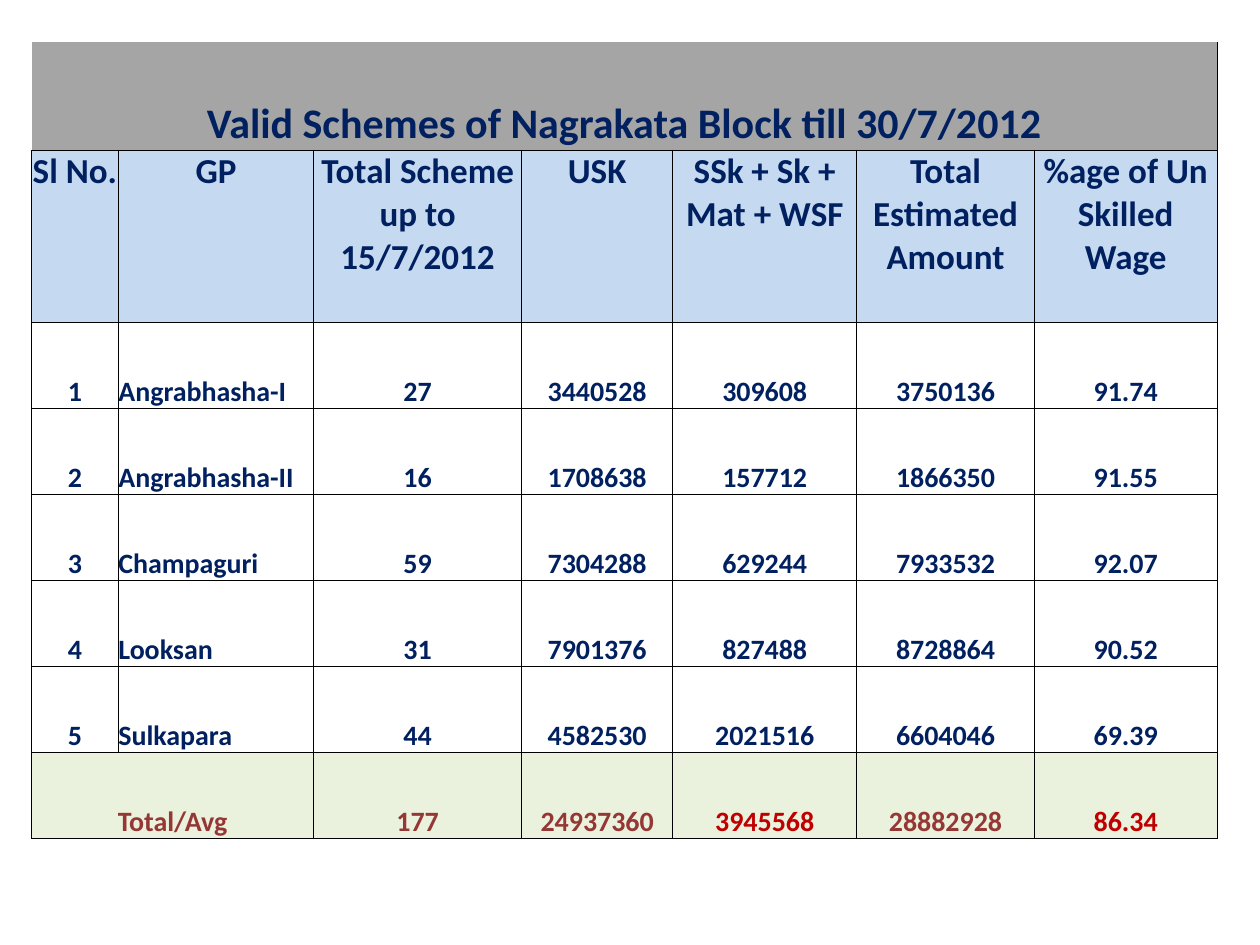
from lxml.etree import SubElement
from pptx import Presentation
from pptx.dml.color import RGBColor
from pptx.enum.text import MSO_ANCHOR, PP_ALIGN
from pptx.oxml.ns import qn
from pptx.util import Inches, Pt

TITLE = "Valid Schemes of Nagrakata Block till 30/7/2012"
HEADINGS = ["Sl No.", "GP", "Total Scheme up to 15/7/2012", "USK",
            "SSk + Sk + Mat + WSF", "Total Estimated Amount",
            "%age of Un Skilled Wage"]
SCHEMES = [
    ("Angrabhasha-I", 27, 3440528, 309608, 3750136, 91.74),
    ("Angrabhasha-II", 16, 1708638, 157712, 1866350, 91.55),
    ("Champaguri", 59, 7304288, 629244, 7933532, 92.07),
    ("Looksan", 31, 7901376, 827488, 8728864, 90.52),
    ("Sulkapara", 44, 4582530, 2021516, 6604046, 69.39),
]
TOTALS = ["Total/Avg", None, 177, 24937360, 3945568, 28882928, 86.34]
HIGHLIGHTED_TOTALS = {4, 6}

THEME = {
    "font": "Calibri", "border": "000000", "border_width": 0.5,
    "highlight": "C00000",
    "title": {"size": 24, "color": "002060", "fill": "A5A5A5"},
    "heading": {"size": 20, "color": "002060", "fill": "C5D9F1"},
    "scheme": {"size": 16, "color": "002060", "fill": None},
    "total": {"size": 16, "color": "953735", "fill": "EAF1DD"},
}

LEFT, TOP, HEIGHT = 0.25, 0.33, 6.33
COLUMN_WIDTHS = [0.69, 1.55, 1.65, 1.2, 1.46, 1.41, 1.45]
TITLE_HEIGHT, HEADING_HEIGHT = 0.86, 1.37
NAME_COLUMN = 1
ALL_SIDES = "LRTB"


def set_borders(cell, drawn_sides):
    """Draw the named sides and clear the rest; call before filling the cell."""
    properties = cell._tc.get_or_add_tcPr()
    for side in ALL_SIDES:
        line = SubElement(properties, qn(f"a:ln{side}"),
                          w=str(Pt(THEME["border_width"])))
        if side in drawn_sides:
            paint = SubElement(line, qn("a:solidFill"))
            SubElement(paint, qn("a:srgbClr"), val=THEME["border"])
        else:
            SubElement(line, qn("a:noFill"))


def style_cell(cell, kind, sides):
    set_borders(cell, sides)
    if THEME[kind]["fill"]:
        cell.fill.solid()
        cell.fill.fore_color.rgb = RGBColor.from_string(THEME[kind]["fill"])
    else:
        cell.fill.background()
    layout = {
        "margin_left": 0, "margin_right": 0, "margin_top": 0, "margin_bottom": 0,
        "vertical_anchor": MSO_ANCHOR.TOP if kind == "heading" else MSO_ANCHOR.BOTTOM,
    }
    for name, value in layout.items():
        setattr(cell, name, value)


def write_cell(cell, value, kind, color, align):
    para = cell.text_frame.paragraphs[0]
    para.alignment = align
    span = para.add_run()
    span.text = str(value)
    format_values = {"name": THEME["font"], "size": Pt(THEME[kind]["size"]), "bold": True}
    for name, setting in format_values.items():
        setattr(span.font, name, setting)
    span.font.color.rgb = RGBColor.from_string(color)


def main():
    deck = Presentation()
    deck.slide_width, deck.slide_height = Inches(10), Inches(7.5)
    page = deck.slides.add_slide(deck.slide_layouts[6])

    columns = len(COLUMN_WIDTHS)
    rows = [("title", [TITLE] + [None] * (columns - 1)), ("heading", HEADINGS)]
    rows += [("scheme", (number, *scheme)) for number, scheme in enumerate(SCHEMES, 1)]
    rows.append(("total", TOTALS))

    body_height = (HEIGHT - TITLE_HEIGHT - HEADING_HEIGHT) / (len(rows) - 2)
    row_heights = {"title": TITLE_HEIGHT, "heading": HEADING_HEIGHT}
    table = page.shapes.add_table(
        len(rows), columns, Inches(LEFT), Inches(TOP),
        Inches(sum(COLUMN_WIDTHS)), Inches(HEIGHT)).table
    table.first_row = table.horz_banding = False
    for column, width in zip(table.columns, COLUMN_WIDTHS):
        column.width = Inches(width)

    for row_index, (kind, values) in enumerate(rows):
        table.rows[row_index].height = Inches(row_heights.get(kind, body_height))
        for column_index, value in enumerate(values):
            cell = table.cell(row_index, column_index)
            style_cell(cell, kind, "RB" if kind == "title" else ALL_SIDES)
            if value is None:
                continue
            highlighted = kind == "total" and column_index in HIGHLIGHTED_TOTALS
            color = THEME["highlight"] if highlighted else THEME[kind]["color"]
            is_name = kind == "scheme" and column_index == NAME_COLUMN
            write_cell(cell, value, kind, color,
                       PP_ALIGN.LEFT if is_name else PP_ALIGN.CENTER)

    last_row = len(rows) - 1
    table.cell(0, 0).merge(table.cell(0, columns - 1))
    table.cell(last_row, 0).merge(table.cell(last_row, NAME_COLUMN))
    deck.save("out.pptx")


if __name__ == "__main__":
    main()
